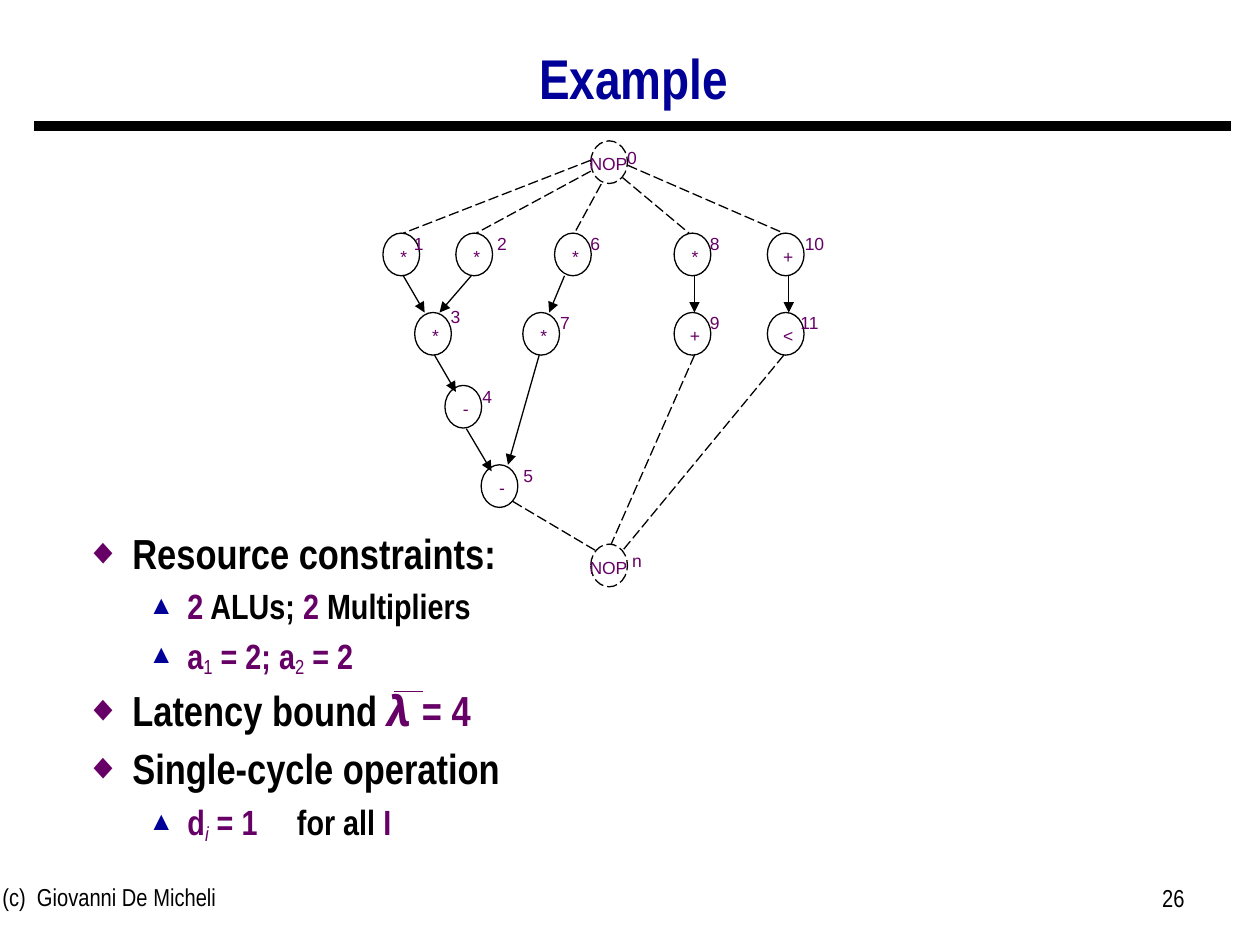
import dataclasses

import lxml.etree
import pptx
import pptx.dml.color
import pptx.enum.dml
import pptx.enum.shapes
import pptx.enum.text
import pptx.oxml.ns
import pptx.util

Cm, Pt, qn = pptx.util.Cm, pptx.util.Pt, pptx.oxml.ns.qn
Align = pptx.enum.text.PP_ALIGN

BLACK, NAVY, PURPLE = "000000", "000099", "660066"
NARROW = "Arial Narrow"
NODE_WIDTH, NODE_HEIGHT = 0.74, 0.86
TEXT_HEIGHT = 0.69


@dataclasses.dataclass
class Node:
    operator: str
    left: float
    top: float
    label: str
    label_left: float
    label_top: float

    @property
    def is_nop(self) -> bool:
        return self.operator == "NOP"


@dataclasses.dataclass
class Edge:
    start: tuple[float, float]
    end: tuple[float, float]
    dashed: bool = False


@dataclasses.dataclass
class Span:
    text: str
    color: str = PURPLE
    subscript: bool = False
    italic: bool = False
    font: str = NARROW
    spacing: int = 0  # hundredths of a point


@dataclasses.dataclass
class Level:
    size: int
    margin: float
    hanging: float
    bullet: str
    bullet_color: str
    bullet_percent: int


MAIN = Level(24, 0.95, 0.95, "◆", PURPLE, 85)
SUB = Level(20, 2.06, 0.79, "▲", NAVY, 75)

ROWS = (4.7, 6.3, 7.77, 9.37)
NODES = [
    Node("NOP", 11.91, 2.84, "0", 12.22, 2.84),
    Node("*", 7.72, ROWS[0], "1", 7.92, 4.57),
    Node("*", 9.19, ROWS[0], "2", 9.6, 4.57),
    Node("*", 8.36, ROWS[1], "3", 8.66, 6.05),
    Node("-", 8.97, ROWS[2], "4", 9.3, 7.65),
    Node("-", 9.7, ROWS[3], "5", 10.13, 9.25),
    Node("*", 11.18, ROWS[0], "6", 11.48, 4.57),
    Node("*", 10.54, ROWS[1], "7", 10.87, 6.17),
    Node("*", 13.59, ROWS[0], "8", 13.89, 4.57),
    Node("+", 13.59, ROWS[1], "9", 13.89, 6.17),
    Node("+", 15.47, ROWS[0], "10", 15.9, 4.57),
    Node("<", 15.47, ROWS[1], "11", 15.8, 6.17),
    Node("NOP", 11.91, 10.97, "n", 12.32, 10.97),
]
EDGES = [
    # Source to the first operations
    Edge((11.91, 3.23), (8.13, 4.7), True),
    Edge((11.91, 3.45), (9.6, 4.7), True),
    Edge((12.12, 3.71), (11.58, 4.7), True),
    Edge((12.55, 3.58), (13.89, 4.7), True),
    Edge((12.65, 3.33), (15.8, 4.7), True),
    # Data dependencies
    Edge((8.13, 5.56), (8.56, 6.3)),
    Edge((9.5, 5.56), (8.86, 6.3)),
    Edge((11.38, 5.56), (11.07, 6.3)),
    Edge((14, 5.56), (14, 6.3)),
    Edge((15.9, 5.56), (15.9, 6.3)),
    Edge((8.76, 7.16), (9.19, 7.9)),
    Edge((9.4, 8.64), (9.91, 9.5)),
    Edge((10.87, 7.16), (10.24, 9.37)),
    # Last operations to the sink
    Edge((10.34, 10.11), (12.01, 11.1), True),
    Edge((14, 7.16), (12.32, 10.97), True),
    Edge((15.8, 7.16), (12.55, 11.1), True),
]
BODY = [
    (MAIN, [Span("Resource constraints:", BLACK)]),
    (SUB, [Span("2"), Span(" ALUs; ", BLACK), Span("2 "),
           Span("Multipliers", BLACK)]),
    (SUB, [Span("a"), Span("1", subscript=True), Span(" = 2; a"),
           Span("2", subscript=True), Span(" = 2")]),
    (MAIN, [Span("Latency bound ", BLACK),
            Span("λ ", italic=True, font="Noto Sans"), Span("= 4")]),
    (MAIN, [Span("Single-cycle operation", BLACK)]),
    (SUB, [Span("d"), Span("i", subscript=True, italic=True), Span(" = 1"),
           Span(" ", BLACK, spacing=1800), Span("for all ", BLACK), Span("I")]),
]


def rgb(value: str) -> pptx.dml.color.RGBColor:
    return pptx.dml.color.RGBColor.from_string(value)


def style(para, name: str, size: float, color: str, bold: bool = False) -> None:
    """Give a paragraph and its runs one font."""
    for part in (para, *para.runs):
        part.font.name, part.font.size, part.font.bold = name, Pt(size), bold
        part.font.color.rgb = rgb(color)


def add_text(page, text: str, left: float, top: float, width: float, height: float,
             name: str, size: float, color: str, align, wrap: bool = True) -> None:
    box = page.shapes.add_textbox(Cm(left), Cm(top), Cm(width), Cm(height))
    box.text_frame.word_wrap = wrap
    para = box.text_frame.paragraphs[0]
    para.text, para.alignment = text, align
    style(para, name, size, color)


def add_line(page, start: tuple[float, float], end: tuple[float, float],
             color: str = BLACK, width: float = 0.75,
             dashed: bool = False, arrow: bool = False) -> None:
    line = page.shapes.add_connector(
        pptx.enum.shapes.MSO_CONNECTOR.STRAIGHT, *map(Cm, start + end))
    line.line.color.rgb, line.line.width = rgb(color), Pt(width)
    if dashed:
        line.line.dash_style = pptx.enum.dml.MSO_LINE.LONG_DASH
    properties = line.element.spPr
    if arrow:
        outline = properties.find(qn("a:ln"))
        lxml.etree.SubElement(outline, qn("a:tailEnd"), type="triangle")
    lxml.etree.SubElement(properties, qn("a:effectLst"))


def add_node(page, node: Node) -> None:
    oval = page.shapes.add_shape(
        pptx.enum.shapes.MSO_SHAPE.OVAL, Cm(node.left), Cm(node.top),
        Cm(NODE_WIDTH), Cm(NODE_HEIGHT))
    oval.shadow.inherit = False
    oval.fill.background()
    oval.line.color.rgb, oval.line.width = rgb(BLACK), Pt(0.75)
    if node.is_nop:
        oval.line.dash_style = pptx.enum.dml.MSO_LINE.LONG_DASH
    shift, width = (-0.33, 1.37) if node.is_nop else (0, 0.84)
    font = ("Arial", 10, PURPLE, Align.CENTER, False)
    add_text(page, node.operator, node.left + shift, node.top + 0.13,
             width, TEXT_HEIGHT, *font)
    add_text(page, node.label, node.label_left, node.label_top,
             1.04, TEXT_HEIGHT, *font)


def set_level(para, level: Level) -> None:
    """Set indents, spacing and bullet of one list level."""
    para.line_spacing = 0.9
    properties = para._p.get_or_add_pPr()
    properties.set("marL", str(Cm(level.margin)))
    properties.set("indent", str(-Cm(level.hanging)))

    def add(parent, tag: str, **values: str):
        return lxml.etree.SubElement(parent, qn(tag), **values)

    add(add(properties, "a:spcBef"), "a:spcPct", val="30000")
    add(add(properties, "a:buClr"), "a:srgbClr", val=level.bullet_color)
    add(properties, "a:buSzPct", val=str(level.bullet_percent * 1000))
    add(properties, "a:buFont", typeface="Arial")
    add(properties, "a:buChar", char=level.bullet)


def add_body(page) -> None:
    box = page.shapes.add_textbox(Cm(1.47), Cm(10.62), Cm(21.59), Cm(7.32))
    frame = box.text_frame
    frame.word_wrap = True
    for index, (level, spans) in enumerate(BODY):
        para = frame.add_paragraph() if index else frame.paragraphs[0]
        para.level = int(level is SUB)
        set_level(para, level)
        for span in spans:
            para.add_run().text = span.text
        style(para, NARROW, level.size, BLACK, True)
        for run, span in zip(para.runs, spans):
            run.font.name, run.font.italic = span.font, span.italic
            run.font.bold = not span.subscript
            run.font.color.rgb = rgb(span.color)
            if span.subscript:
                run.font._element.set("baseline", "-16000")
            if span.spacing:
                run.font._element.set("spc", str(span.spacing))


def main() -> None:
    deck = pptx.Presentation()
    deck.slide_width, deck.slide_height = Cm(25.4), Cm(19.05)
    page = deck.slides.add_slide(deck.slide_layouts[5])

    # Title and rule
    title = page.shapes.title
    title.left, title.top, title.width, title.height = map(Cm, (1.98, 0.64, 21.59, 2))
    title.text_frame.vertical_anchor = pptx.enum.text.MSO_ANCHOR.MIDDLE
    heading = title.text_frame.paragraphs[0]
    heading.text, heading.alignment, heading.line_spacing = "Example", Align.CENTER, 0.9
    style(heading, NARROW, 32, NAVY, True)
    add_line(page, (0.69, 2.54), (24.82, 2.54), width=6)

    # Footer
    add_text(page, "(c)  Giovanni De Micheli", -0.2, 17.65, 8.05, 1.32,
             NARROW, 14, BLACK, Align.LEFT)
    add_text(page, "26", 18.21, 17.68, 5.92, 1.32, NARROW, 14, BLACK, Align.RIGHT)

    # Constraints, with the bar over lambda
    add_body(page)
    add_line(page, (7.95, 13.94), (8.53, 13.94), color=PURPLE)

    # Sequencing graph
    for node in NODES:
        add_node(page, node)
    for edge in EDGES:
        add_line(page, edge.start, edge.end, dashed=edge.dashed, arrow=not edge.dashed)

    deck.save("out.pptx")


if __name__ == "__main__":
    main()
